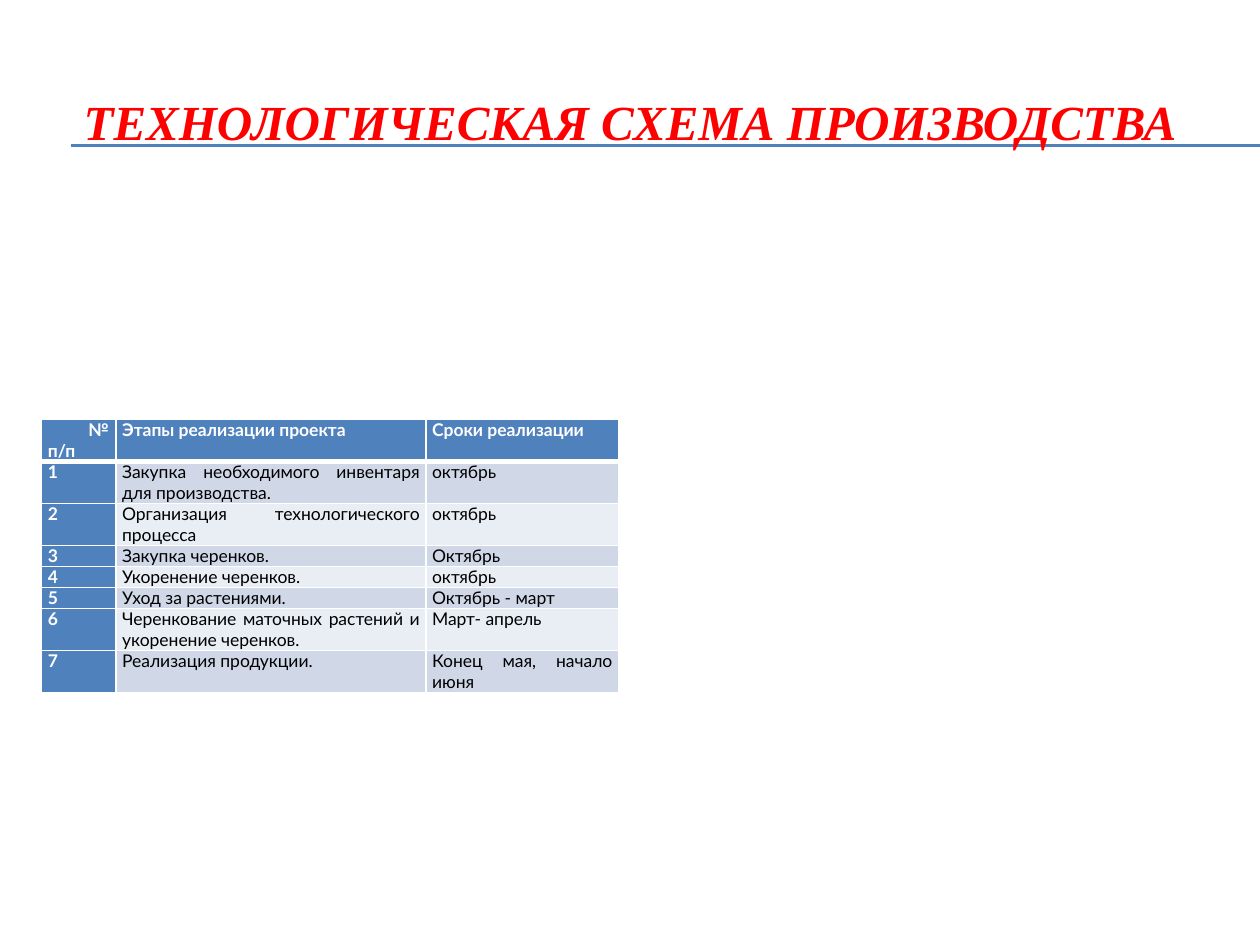
from pptx import Presentation
from pptx.dml.color import RGBColor
from pptx.enum.shapes import MSO_CONNECTOR
from pptx.enum.text import MSO_ANCHOR, MSO_AUTO_SIZE, PP_ALIGN
from pptx.oxml.ns import qn
from pptx.util import Inches, Pt
from lxml import etree

STRAIGHT = MSO_CONNECTOR.STRAIGHT
MIDDLE = MSO_ANCHOR.MIDDLE
TOP = MSO_ANCHOR.TOP
NO_AUTOFIT = MSO_AUTO_SIZE.NONE
CENTER = PP_ALIGN.CENTER
JUSTIFY = PP_ALIGN.JUSTIFY

BLUE = "4F81BD"
WHITE = "FFFFFF"
BANDS = ["E9EDF4", "D0D8E8"]


def color(value):
    return RGBColor.from_string(value)


def add_border(cell, side, width):
    line = etree.SubElement(cell._tc.get_or_add_tcPr(), qn("a:" + side), w=str(Pt(width)))
    fill = etree.SubElement(line, qn("a:solidFill"))
    etree.SubElement(fill, qn("a:srgbClr"), val=WHITE)


presentation = Presentation()
presentation.slide_width = Inches(10)
presentation.slide_height = Inches(7.5)
slide = presentation.slides.add_slide(presentation.slide_layouts[5])

title = slide.shapes.title
title.left, title.top = Inches(0), Inches(0.5)
title.width, title.height = Inches(10), Inches(0.92)
title.text_frame.auto_size = NO_AUTOFIT
title.text_frame.vertical_anchor = MIDDLE
paragraph = title.text_frame.paragraphs[0]
paragraph.alignment = CENTER
run = paragraph.add_run()
run.text = "ТЕХНОЛОГИЧЕСКАЯ СХЕМА ПРОИЗВОДСТВА"
run.font.name = "Times New Roman"
run.font.size = Pt(28)
run.font.bold = True
run.font.italic = True
run.font.color.rgb = color("FF0000")

for y in (1.15, 1.16):
    rule = slide.shapes.add_connector(STRAIGHT, Inches(0.56), Inches(y), Inches(10), Inches(y))
    rule.line.color.rgb = color(BLUE)
    rule.line.width = Pt(0.75)
    etree.SubElement(rule._element.spPr, qn("a:effectLst"))
    title._element.addprevious(rule._element)

stages = [
    ("№ п/п", "Этапы реализации проекта", "Сроки реализации"),
    ("1", "Закупка необходимого инвентаря для производства.", "октябрь"),
    ("2", "Организация технологического процесса", "октябрь"),
    ("3", "Закупка черенков.", "Октябрь"),
    ("4", "Укоренение черенков.", "октябрь"),
    ("5", "Уход за растениями.", "Октябрь - март"),
    ("6", "Черенкование маточных растений и укоренение черенков.", "Март- апрель"),
    ("7", "Реализация продукции.", "Конец мая, начало июня"),
]
column_widths = [0.59, 2.46, 1.53]
row_heights = [0.16, 0.32, 0.16, 0.16, 0.16, 0.16, 0.32, 0.16]

table = slide.shapes.add_table(
    len(stages), len(column_widths), Inches(0.33), Inches(3.33), Inches(4.58), Inches(2)
).table
for column, width in zip(table.columns, column_widths):
    column.width = Inches(width)
for row, height in zip(table.rows, row_heights):
    row.height = Inches(height)

for row_index, stage in enumerate(stages):
    for column_index, text in enumerate(stage):
        heading = row_index == 0 or column_index == 0
        cell = table.cell(row_index, column_index)
        cell.margin_left = cell.margin_right = Inches(0.05)
        cell.margin_top = cell.margin_bottom = Inches(0)
        cell.vertical_anchor = TOP
        for side in ("lnL", "lnR", "lnT", "lnB"):
            below_header = (row_index, side) in ((0, "lnB"), (1, "lnT"))
            add_border(cell, side, 3 if below_header else 1)
        cell.fill.solid()
        cell.fill.fore_color.rgb = color(BLUE if heading else BANDS[row_index % 2])
        paragraph = cell.text_frame.paragraphs[0]
        paragraph.alignment = JUSTIFY
        run = paragraph.add_run()
        run.text = text
        run.font.name = "Lato"
        run.font.size = Pt(10)
        run.font.bold = heading
        run.font.color.rgb = color(WHITE if heading else "000000")

number_heading = table.cell(0, 0).text_frame.paragraphs[0]
number_heading._p.get_or_add_pPr().set("indent", str(Inches(0.32)))

presentation.save("out.pptx")
